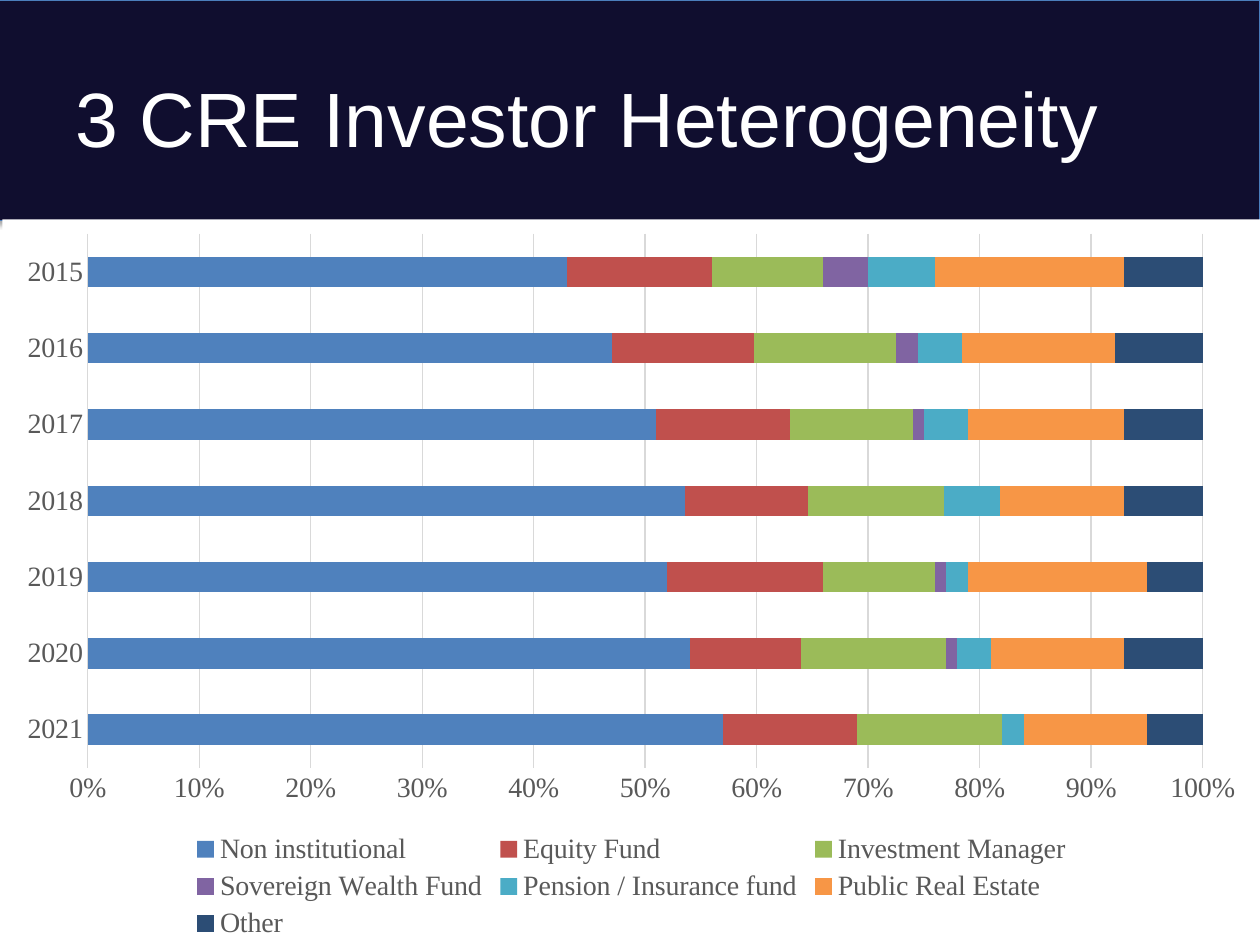
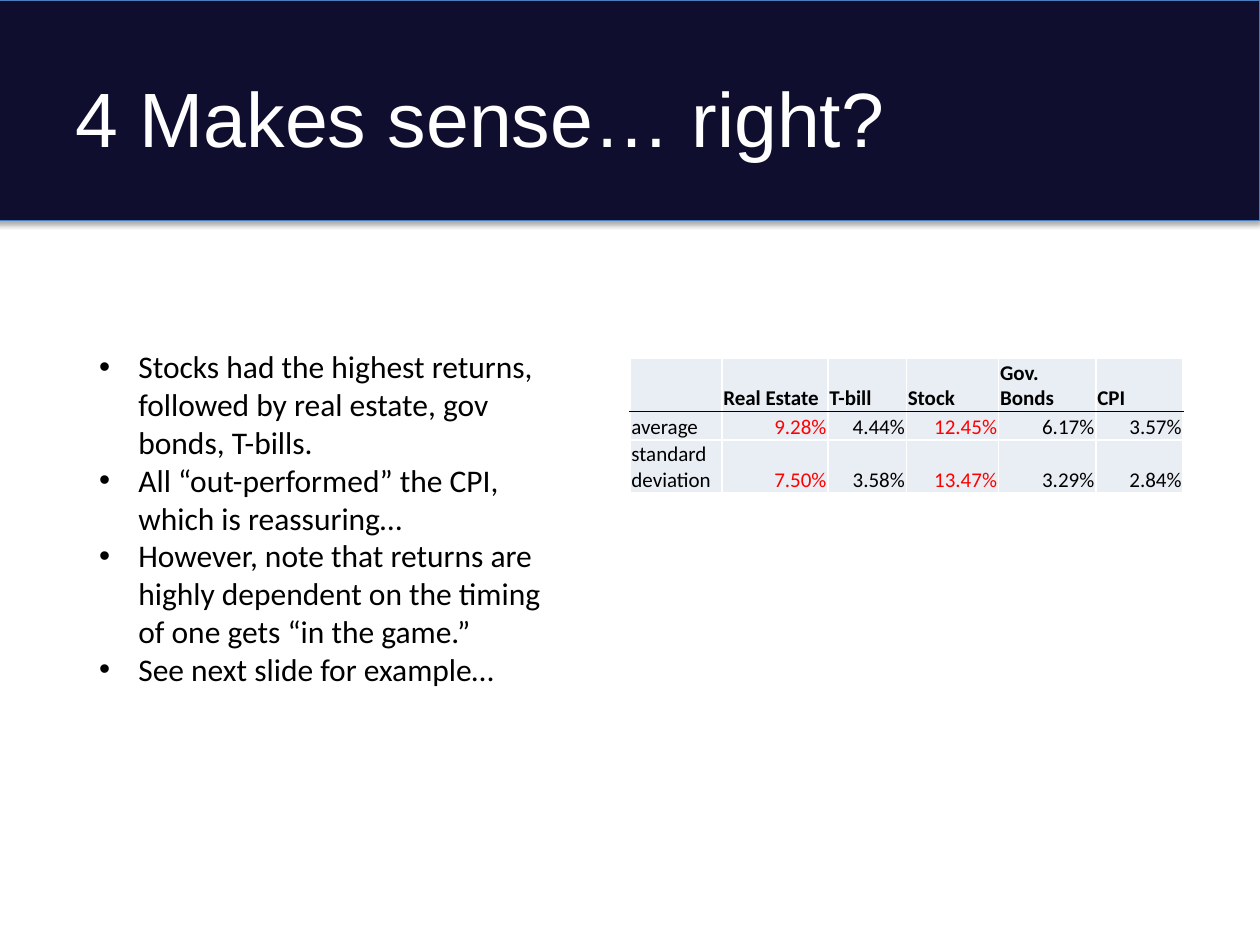
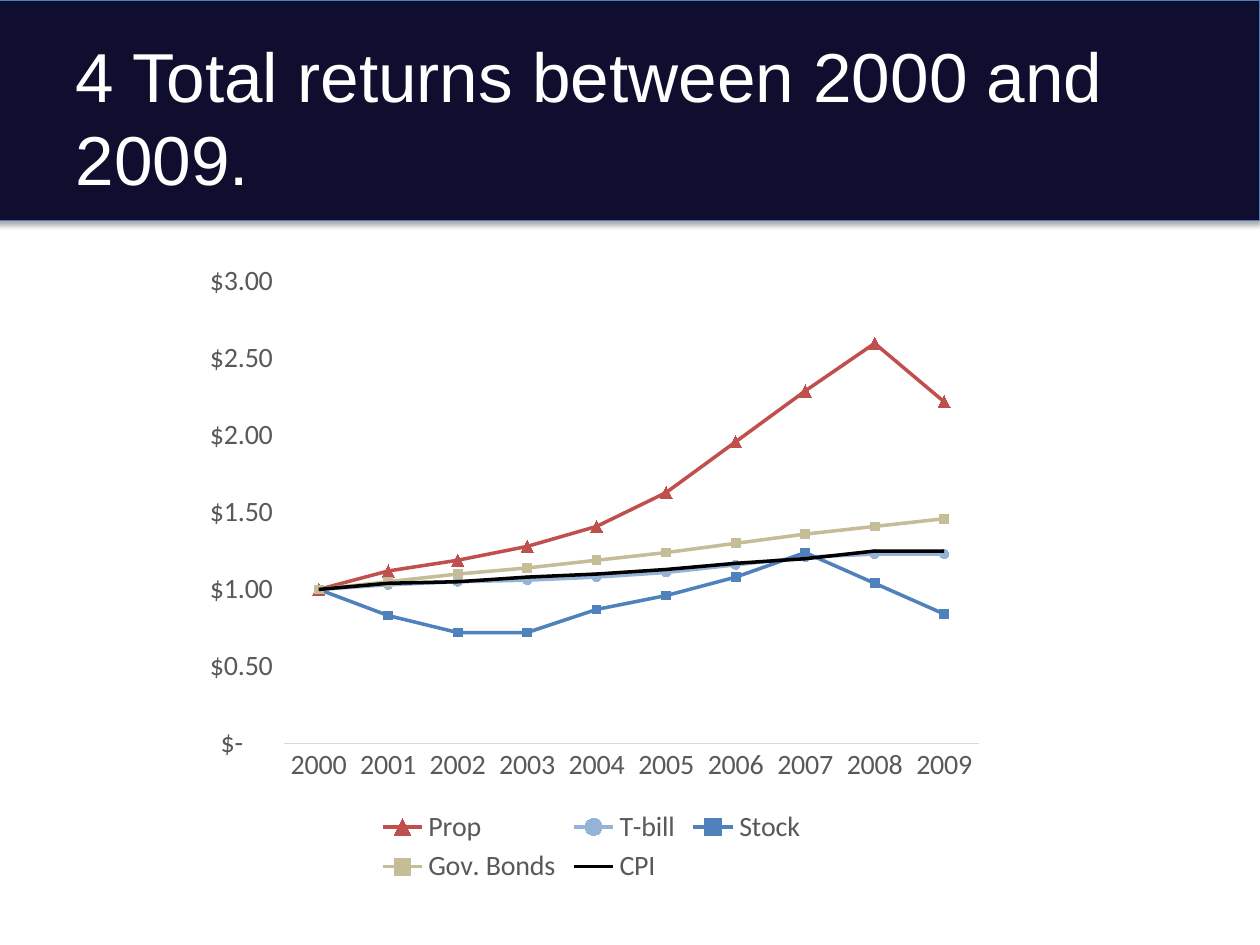
from dataclasses import dataclass
from typing import Any, Optional

from lxml.etree import SubElement
from pptx import Presentation
from pptx.chart.chart import Chart
from pptx.chart.data import CategoryChartData
from pptx.dml.color import RGBColor
from pptx.enum.chart import XL_CHART_TYPE as ChartKind
from pptx.enum.chart import XL_LEGEND_POSITION as LegendPosition
from pptx.enum.chart import XL_MARKER_STYLE as Marker
from pptx.enum.chart import XL_TICK_MARK as TickMark
from pptx.enum.shapes import MSO_SHAPE as ShapeKind
from pptx.enum.text import MSO_ANCHOR as Anchor
from pptx.enum.text import MSO_AUTO_SIZE as AutoSize
from pptx.enum.text import PP_ALIGN as Align
from pptx.oxml import parse_xml
from pptx.oxml.ns import nsdecls, qn
from pptx.slide import Slide
from pptx.util import Cm, Pt

NAVY, BAND_EDGE = "100E2F", "4B7EBC"
WHITE, BLACK, RED = "FFFFFF", "000000", "FF0000"
AXIS_TEXT, AXIS_LINE, CELL = "595959", "D9D9D9", "E9EDF4"
TITLE_FONT, BODY_FONT, SERIF_FONT = "Arial", "Calibri", "Times New Roman"
DOLLARS = r'_("$"* #,##0.00_);_("$"* \(#,##0.00\);_("$"* "-"??_);_(@_)'


@dataclass(frozen=True)
class Box:
    """A frame on the page, in centimetres."""
    left: float
    top: float
    width: float
    height: float

    def lengths(self) -> tuple:
        return Cm(self.left), Cm(self.top), Cm(self.width), Cm(self.height)


@dataclass(frozen=True)
class Series:
    name: str
    values: tuple
    color: str
    marker: Optional[Marker] = None
    marker_size: int = 5


@dataclass(frozen=True)
class ChartPlan:
    kind: ChartKind
    box: Box
    font: str
    categories: range
    series: tuple
    number_format: str
    value_axis: dict


BAND_BOX = Box(-0.1, 0, 25.5, 4.45)
TITLE_BOX = Box(1.27, 0.76, 22.86, 3.18)
POINTS_BOX = Box(1.75, 6.88, 9.78, 7.19)
POINTS_INDENT = Cm(0.79)

INVESTORS = ChartPlan(
    ChartKind.BAR_STACKED_100, Box(0.05, 4.42, 25.35, 14.63), SERIF_FONT,
    range(2021, 2014, -1),
    (
        Series("Non institutional", (57, 54, 52, 53, 51, 48, 43), "4F81BD"),
        Series("Equity Fund", (12, 10, 14, 11, 12, 13, 13), "C0504D"),
        Series("Investment Manager", (13, 13, 10, 12, 11, 13, 10), "9BBB59"),
        Series("Sovereign Wealth Fund", (0, 1, 1, 0, 1, 2, 4), "8064A2"),
        Series("Pension / Insurance fund", (2, 3, 2, 5, 4, 4, 6), "4BACC6"),
        Series("Public Real Estate", (11, 12, 16, 11, 14, 14, 17), "F79646"),
        Series("Other", (5, 7, 5, 7, 7, 8, 7), "2C4D75"),
    ),
    "0%", {"has_major_gridlines": True},
)

RETURNS = ChartPlan(
    ChartKind.LINE_MARKERS, Box(3.78, 5.08, 16.28, 12.85), BODY_FONT,
    range(2000, 2010),
    (
        Series("Prop", (1, 1.12, 1.19, 1.28, 1.41, 1.63, 1.96, 2.29, 2.6, 2.22),
               "C0504D", Marker.TRIANGLE, 7),
        Series("T-bill", (1, 1.03, 1.05, 1.06, 1.08, 1.11, 1.16, 1.21, 1.23, 1.23),
               "95B3D7", Marker.CIRCLE),
        Series("Stock", (1, 0.83, 0.72, 0.72, 0.87, 0.96, 1.08, 1.24, 1.04, 0.84),
               "4F81BD", Marker.SQUARE),
        Series("Gov. Bonds", (1, 1.05, 1.1, 1.14, 1.19, 1.24, 1.3, 1.36, 1.41, 1.46),
               "C4BD97", Marker.SQUARE),
        Series("CPI", (1, 1.04, 1.05, 1.08, 1.1, 1.13, 1.17, 1.2, 1.25, 1.25),
               BLACK),
    ),
    DOLLARS,
    {"has_major_gridlines": False, "minimum_scale": 0, "maximum_scale": 3,
     "major_unit": 0.5},
)

POINTS = (
    "Stocks had the highest returns, followed by real estate, gov bonds, T-bills.",
    "All “out-performed” the CPI, which is reassuring…",
    "However, note that returns are highly dependent on the timing of one gets "
    "“in the game.”",
    "See next slide for example…",
)

STATISTICS = (
    ("", "Real Estate", "T-bill", "Stock", "Gov. Bonds", "CPI"),
    ("average", "9.28%", "4.44%", "12.45%", "6.17%", "3.57%"),
    ("standard deviation", "7.50%", "3.58%", "13.47%", "3.29%", "2.84%"),
)
COLUMN_WIDTHS = (1.85, 2.14, 1.58, 1.86, 1.96, 1.76)
ROW_HEIGHTS = (1.04, 0.58, 1.04)
TABLE_BOX = Box(12.7, 7.23, sum(COLUMN_WIDTHS), sum(ROW_HEIGHTS))
RED_COLUMNS = ("Real Estate", "Stock")


def assign(target: Any, values: dict) -> None:
    for name, value in values.items():
        setattr(target, name, value)


def paint(fill: Any, color: str) -> None:
    fill.solid()
    fill.fore_color.rgb = RGBColor.from_string(color)


def stroke(line: Any, color: str, points: float) -> None:
    paint(line.fill, color)
    line.width = Pt(points)


def style_font(font: Any, name: str, points: float, color: str,
               bold: bool = False) -> None:
    assign(font, {"name": name, "size": Pt(points), "bold": bold})
    paint(font.fill, color)


def add_band(page: Slide) -> None:
    """Put the title band on the layout, so that every page shows it."""
    band = page.shapes.add_shape(ShapeKind.RECTANGLE, *BAND_BOX.lengths())
    paint(band.fill, NAVY)
    stroke(band.line, BAND_EDGE, 0.75)
    band.shadow.inherit = False
    effects = band.element.spPr.find(qn("a:effectLst"))
    shadow = SubElement(effects, qn("a:outerShdw"), blurRad=str(Pt(3.1)),
                        dist=str(Pt(1.8)), dir="5400000", rotWithShape="0")
    color = SubElement(shadow, qn("a:srgbClr"), val=BLACK)
    SubElement(color, qn("a:alpha"), val="35000")
    page.slide_layout.shapes.element.insert(2, band.element)


def add_page(deck: Any, title: str, points: float = 44) -> Slide:
    page = deck.slides.add_slide(deck.slide_layouts.get_by_name("Title Only"))
    holder = page.shapes.title
    assign(holder, dict(zip(("left", "top", "width", "height"),
                            TITLE_BOX.lengths())))
    frame = holder.text_frame
    assign(frame, {"text": title, "auto_size": AutoSize.NONE, "word_wrap": True,
                   "vertical_anchor": Anchor.MIDDLE})
    para = frame.paragraphs[0]
    para.alignment = Align.LEFT
    style_font(para.runs[0].font, TITLE_FONT, points, WHITE)
    return page


def add_chart(page: Slide, plan: ChartPlan) -> Chart:
    data = CategoryChartData()
    data.categories = [str(year) for year in plan.categories]
    for series in plan.series:
        data.add_series(series.name, series.values)
    chart = page.shapes.add_chart(plan.kind, *plan.box.lengths(), data).chart
    assign(chart, {"has_title": False, "has_legend": True})
    style_font(chart.font, plan.font, 16, BLACK)
    chart.element.find(qn("c:chart")).addnext(parse_xml(
        f'<c:spPr {nsdecls("c", "a")}><a:solidFill><a:srgbClr val="{WHITE}"/>'
        '</a:solidFill><a:ln><a:noFill/></a:ln></c:spPr>'))

    assign(chart.legend, {"position": LegendPosition.BOTTOM,
                          "include_in_layout": False})
    style_font(chart.legend.font, plan.font, 16, AXIS_TEXT)

    for axis in (chart.category_axis, chart.value_axis):
        assign(axis, {"major_tick_mark": TickMark.NONE,
                      "minor_tick_mark": TickMark.NONE})
        style_font(axis.tick_labels.font, plan.font, 16, AXIS_TEXT)
    stroke(chart.category_axis.format.line, AXIS_LINE, 0.75)
    value_axis = chart.value_axis
    assign(value_axis, plan.value_axis)
    assign(value_axis.tick_labels, {"number_format": plan.number_format,
                                    "number_format_is_linked": False})
    value_axis.format.line.fill.background()
    if value_axis.has_major_gridlines:
        stroke(value_axis.major_gridlines.format.line, AXIS_LINE, 0.75)
    chart.plots[0].vary_by_categories = False
    return chart


def color_bars(chart: Chart, plan: ChartPlan) -> None:
    assign(chart.plots[0], {"gap_width": 150, "overlap": 100})
    for bars, series in zip(chart.plots[0].series, plan.series):
        paint(bars.format.fill, series.color)


def color_lines(chart: Chart, plan: ChartPlan) -> None:
    for curve, series in zip(chart.plots[0].series, plan.series):
        curve.smooth = False
        stroke(curve.format.line, series.color, 2)
        curve.marker.style = series.marker or Marker.NONE
        if series.marker:
            curve.marker.size = series.marker_size
            paint(curve.marker.format.fill, series.color)
            stroke(curve.marker.format.line, series.color, 0.75)


def add_points(page: Slide) -> None:
    frame = page.shapes.add_textbox(*POINTS_BOX.lengths()).text_frame
    assign(frame, {"word_wrap": True, "auto_size": AutoSize.SHAPE_TO_FIT_TEXT,
                   "text": "\n".join(POINTS)})
    for para in frame.paragraphs:
        style_font(para.runs[0].font, BODY_FONT, 18, BLACK)
        properties = para._p.get_or_add_pPr()
        properties.set("marL", str(POINTS_INDENT))
        properties.set("indent", str(-POINTS_INDENT))
        SubElement(properties, qn("a:buFont"), typeface="Arial")
        SubElement(properties, qn("a:buChar"), char="•")


def add_borders(cell: Any, top: str, bottom: str) -> None:
    properties = cell._tc.get_or_add_tcPr()
    sides = (("lnL", WHITE), ("lnR", WHITE), ("lnT", top), ("lnB", bottom))
    for place, (side, color) in enumerate(sides):
        properties.insert(place, parse_xml(
            f'<a:{side} {nsdecls("a")} w="{Pt(1)}"><a:solidFill>'
            f'<a:srgbClr val="{color}"/></a:solidFill></a:{side}>'))


def add_statistics(page: Slide) -> None:
    table = page.shapes.add_table(len(STATISTICS), len(COLUMN_WIDTHS),
                                  *TABLE_BOX.lengths()).table
    assign(table, {"first_row": False, "horz_banding": False})
    for column, width in zip(table.columns, COLUMN_WIDTHS):
        column.width = Cm(width)
    for row, height in zip(table.rows, ROW_HEIGHTS):
        row.height = Cm(height)
    for row, texts in enumerate(STATISTICS):
        for column, text in enumerate(texts):
            cell = table.cell(row, column)
            assign(cell, {"text": text, "vertical_anchor": Anchor.BOTTOM,
                          "margin_left": Cm(0.03), "margin_right": Cm(0.03),
                          "margin_top": Cm(0.03), "margin_bottom": 0})
            paint(cell.fill, CELL)
            add_borders(cell, top=BLACK if row == 1 else WHITE,
                        bottom=BLACK if row == 0 else WHITE)
            is_value = row > 0 and column > 0
            is_red = is_value and STATISTICS[0][column] in RED_COLUMNS
            para = cell.text_frame.paragraphs[0]
            para.alignment = Align.RIGHT if is_value else Align.LEFT
            for span in para.runs:
                style_font(span.font, BODY_FONT, 12, RED if is_red else BLACK,
                           bold=row == 0)


def main() -> None:
    deck = Presentation()
    assign(deck, {"slide_width": Cm(25.4), "slide_height": Cm(19.05)})

    page = add_page(deck, "3 CRE Investor Heterogeneity")
    add_band(page)
    color_bars(add_chart(page, INVESTORS), INVESTORS)

    page = add_page(deck, "4 Makes sense… right?")
    add_statistics(page)
    add_points(page)

    page = add_page(deck, "4 Total returns between 2000 and 2009.", 39.6)
    color_lines(add_chart(page, RETURNS), RETURNS)

    deck.save("out.pptx")


if __name__ == "__main__":
    main()
